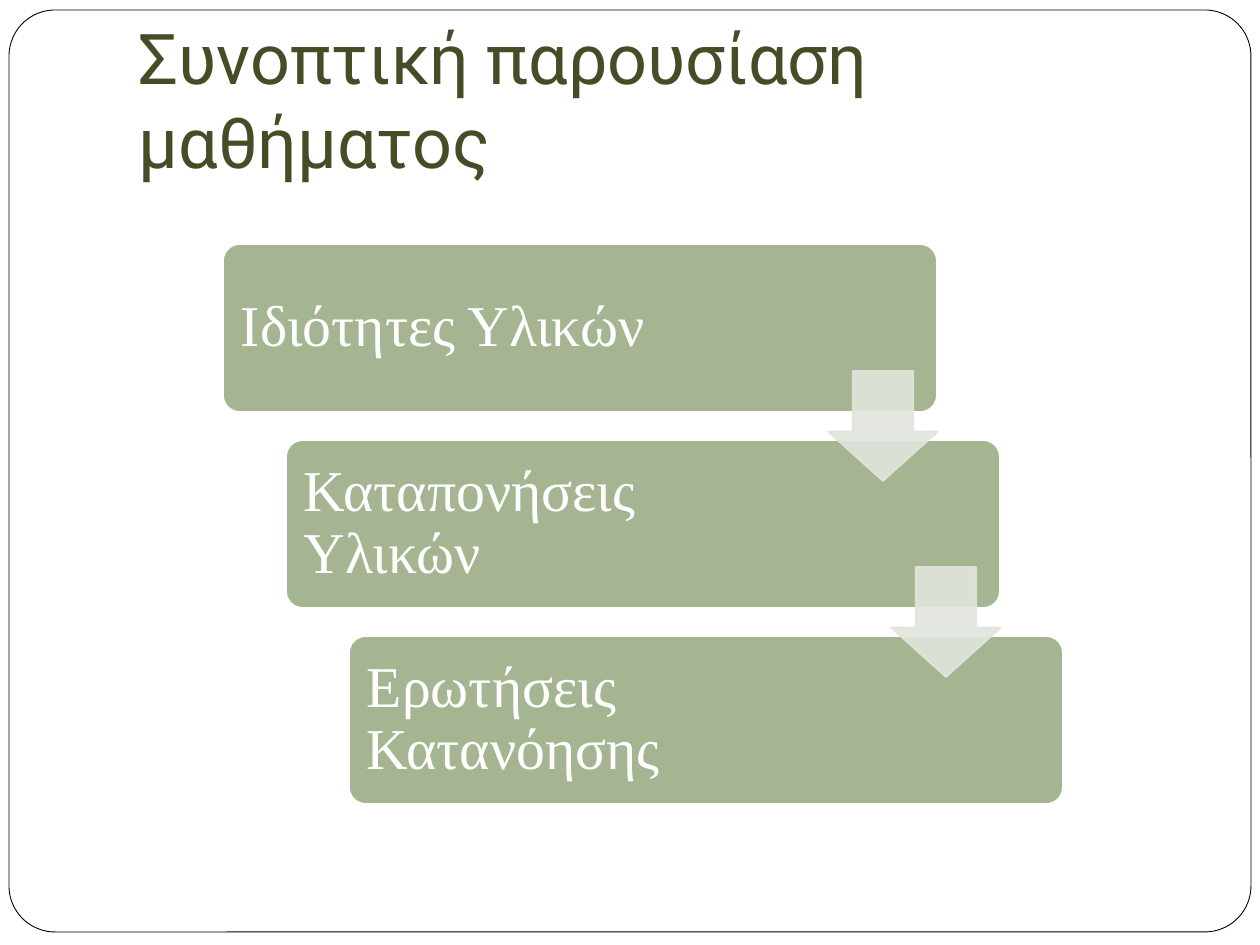
from lxml.etree import SubElement
from pptx import Presentation
from pptx.dml.color import RGBColor
from pptx.enum.shapes import MSO_SHAPE as SHAPE
from pptx.enum.text import MSO_ANCHOR as ANCHOR
from pptx.oxml.ns import qn
from pptx.util import Emu, Pt

WHITE = RGBColor(0xFF, 0xFF, 0xFF)
BLACK = RGBColor(0x00, 0x00, 0x00)
OLIVE = RGBColor(0x44, 0x4D, 0x26)
SAGE = RGBColor(0xA5, 0xB5, 0x92)
MIST = RGBColor(0xE1, 0xE5, 0xDC)

STEPS = ["Ιδιότητες Υλικών", "Καταπονήσεις Υλικών", "Ερωτήσεις Κατανόησης"]
STEP_X, STEP_Y = 63, 196


def px(n):
    """Turn pixels at 126 to the inch into EMU."""
    return Emu(round(n * 914400 / 126))


def add_box(s, kind, x, y, w, h, fill, line, weight=1, adj=()):
    """Add a filled and outlined preset shape."""
    sp = s.shapes.add_shape(kind, px(x), px(y), px(w), px(h))
    sp.shadow.inherit = False
    sp.fill.solid()
    sp.fill.fore_color.rgb = fill
    sp.line.color.rgb = line
    sp.line.width = Pt(weight)
    for i, value in enumerate(adj):
        sp.adjustments[i] = value
    return sp


def add_text(s, text, x, y, w, h, *, font, size, color, anchor, insets, spacing=None):
    """Add a wrapped text box with one formatted paragraph."""
    tf = s.shapes.add_textbox(px(x), px(y), px(w), px(h)).text_frame
    tf.word_wrap = True
    tf.vertical_anchor = anchor
    tf.margin_left, tf.margin_top, tf.margin_right, tf.margin_bottom = map(px, insets)
    p = tf.paragraphs[0]
    p.line_spacing = spacing
    r = p.add_run()
    r.text = text
    r.font.name = font
    r.font.size = Pt(size)
    r.font.color.rgb = color


def add_step(s, text, x, y):
    """Add one rounded block of the staircase with its label."""
    add_box(s, SHAPE.ROUNDED_RECTANGLE, x, y, 714, 168, SAGE, WHITE, adj=[0.1])
    add_text(s, text, x, y, 542, 168, font="Times New Roman", size=33, color=WHITE,
             anchor=ANCHOR.MIDDLE, insets=[18] * 4, spacing=0.9)


def add_arrow(s, x, y):
    """Add a translucent down arrow."""
    sp = add_box(s, SHAPE.DOWN_ARROW, x, y, 110, 110, MIST, MIST, adj=[0.55, 0.45])
    for color in sp._element.spPr.iter(qn("a:srgbClr")):
        SubElement(color, qn("a:alpha"), val="90000")


def main():
    """Build the slide and save it."""
    prs = Presentation()
    prs.slide_width, prs.slide_height = px(1260), px(945)
    s = prs.slides.add_slide(prs.slide_layouts[6])
    add_box(s, SHAPE.ROUNDED_RECTANGLE, 9, 10, 1242, 922, WHITE, BLACK, 0.5, [0.05])
    add_text(s, "Συνοπτική παρουσίαση μαθήματος", 126, 38, 1071, 157, font="Roboto",
             size=40, color=OLIVE, anchor=ANCHOR.BOTTOM, insets=[13, 6, 13, 13])
    for i, text in enumerate(STEPS):
        add_step(s, text, 223 + i * STEP_X, 244 + i * STEP_Y)
    for i in range(len(STEPS) - 1):
        add_arrow(s, 828 + i * STEP_X, 371 + i * STEP_Y)
    prs.save("out.pptx")


if __name__ == "__main__":
    main()
